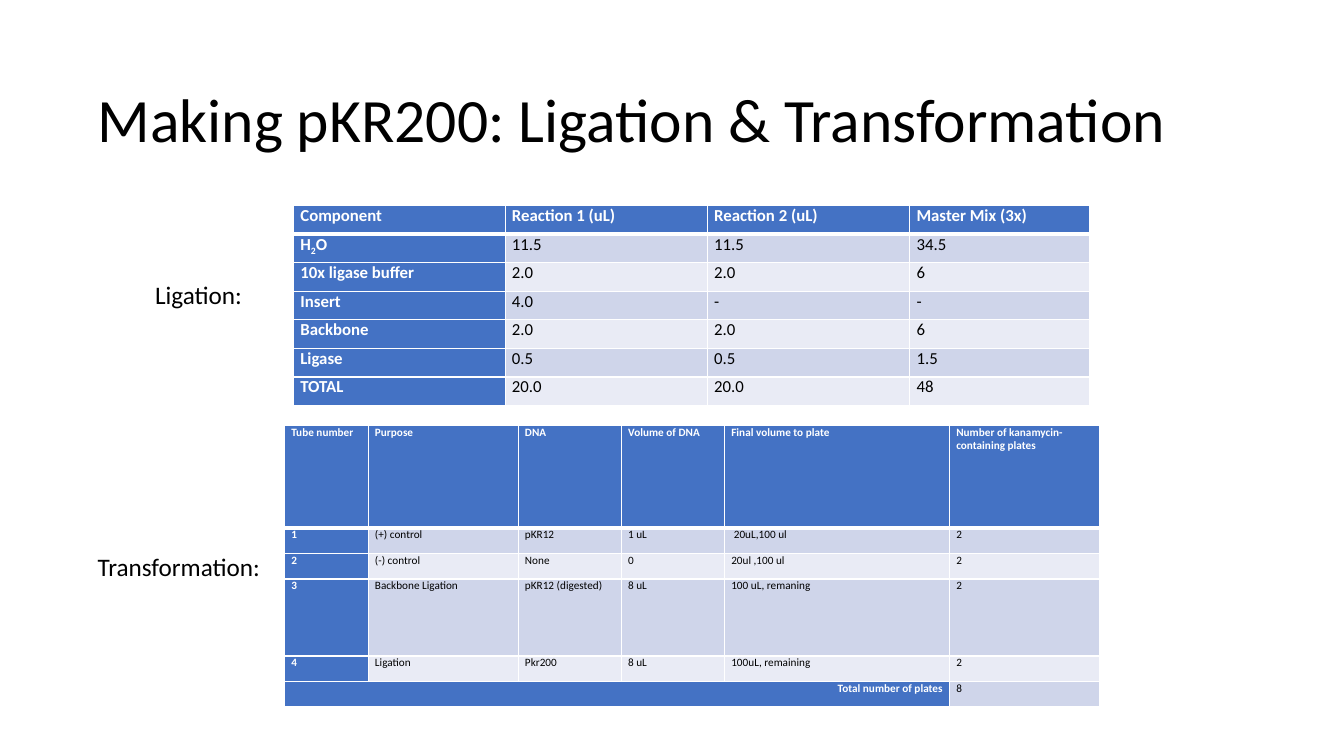
from lxml.etree import SubElement
from pptx import Presentation
from pptx.dml.color import RGBColor
from pptx.enum.text import MSO_ANCHOR as Anchor, PP_ALIGN as Align
from pptx.oxml.ns import qn
from pptx.util import Cm, Pt

BLACK = RGBColor(0x00, 0x00, 0x00)
WHITE = RGBColor(0xFF, 0xFF, 0xFF)
BLUE = RGBColor(0x44, 0x72, 0xC4)
BANDS = [RGBColor(0xE9, 0xEB, 0xF5), RGBColor(0xCF, 0xD5, 0xEA)]
FONT = "Calibri"

LIGATION_ROWS = [
    ["Component", "Reaction 1 (uL)", "Reaction 2 (uL)", "Master Mix (3x)"],
    [("H", "2", "O"), "11.5", "11.5", "34.5"],
    ["10x ligase buffer", "2.0", "2.0", "6"],
    ["Insert", "4.0", "-", "-"],
    ["Backbone", "2.0", "2.0", "6"],
    ["Ligase", "0.5", "0.5", "1.5"],
    ["TOTAL", "20.0", "20.0", "48"],
]
TUBE_ROWS = [
    ["Tube number", "Purpose", "DNA", "Volume of DNA", "Final volume to plate",
     "Number of kanamycin-containing plates"],
    ["1", "(+) control", "pKR12", "1 uL", " 20uL,100 ul", "2"],
    ["2", "(-) control", "None", "0", "20ul ,100 ul", "2"],
    ["3", "Backbone Ligation", "pKR12 (digested)", "8 uL", "100 uL, remaning", "2"],
    ["4", "Ligation", "Pkr200", "8 uL", "100uL, remaining", "2"],
    ["Total number of plates", None, None, None, None, "8"],
]


def add_span(para, text, size, color=BLACK, bold=False):
    span = para.add_run()
    span.text = text
    font = span.font
    font.name, font.size, font.bold = FONT, Pt(size), bold
    font.color.rgb = color
    return span


def add_text(page, text, left, top, width, height, size, wrap=False):
    box = page.shapes.add_textbox(Cm(left), Cm(top), Cm(width), Cm(height))
    box.text_frame.word_wrap = wrap
    para = box.text_frame.paragraphs[0]
    add_span(para, text, size)
    return box


def set_borders(cell, top, bottom):
    """White borders; top and bottom widths are in points."""
    properties = cell._tc.get_or_add_tcPr()
    for side, width in (("L", 1), ("R", 1), ("T", top), ("B", bottom)):
        line = SubElement(properties, qn(f"a:ln{side}"), w=str(Pt(width)))
        SubElement(SubElement(line, qn("a:solidFill")), qn("a:srgbClr"), val=str(WHITE))


def fill_cell(cell, content, size, row, is_heading):
    cell.margin_left = cell.margin_right = Cm(0.17)
    cell.margin_top = cell.margin_bottom = 0
    set_borders(cell, 3 if row == 1 else 1, 3 if row == 0 else 1)
    cell.fill.solid()
    cell.fill.fore_color.rgb = BLUE if is_heading else BANDS[row % 2]
    if content is None:
        return
    parts = content if isinstance(content, tuple) else (content,)
    para = cell.text_frame.paragraphs[0]
    for index, part in enumerate(parts):
        span = add_span(para, part, size, WHITE if is_heading else BLACK, is_heading)
        if index == 1:  # the middle part of a formula is a subscript
            span._r.get_or_add_rPr().set("baseline", "-25000")


def add_grid(page, rows, left, top, widths, heights, size):
    frame = page.shapes.add_table(len(rows), len(widths), Cm(left), Cm(top),
                                  Cm(sum(widths)), Cm(sum(heights)))
    table = frame.table
    table.first_col = True
    for column, width in zip(table.columns, widths):
        column.width = Cm(width)
    for table_row, height in zip(table.rows, heights):
        table_row.height = Cm(height)
    for r, contents in enumerate(rows):
        for c, content in enumerate(contents):
            fill_cell(table.cell(r, c), content, size, r, r == 0 or c == 0)
    return table


def main():
    deck = Presentation()
    deck.slide_width, deck.slide_height = Cm(33.87), Cm(19.05)
    page = deck.slides.add_slide(deck.slide_layouts[6])

    # Title
    title = add_text(page, "Making pKR200: Ligation & Transformation",
                     2.21, 1.22, 29.36, 3.73, 44, wrap=True)
    title.text_frame.vertical_anchor = Anchor.MIDDLE
    title.text_frame.paragraphs[0].line_spacing = 0.9

    # Ligation table
    add_grid(page, LIGATION_ROWS, 7.4, 5.18, [5.33, 5.1, 5.1, 4.53], [0.72] * 7, 12)

    # Transformation table, with a total row across the first five columns
    tubes = add_grid(page, TUBE_ROWS, 7.17, 10.72, [2.11, 3.78, 2.6, 2.6, 5.67, 3.78],
                     [2.59, 0.64, 0.64, 1.94, 0.64, 0.64], 8)
    total = tubes.cell(5, 0)
    total.merge(tubes.cell(5, 4))
    total.text_frame.paragraphs[0].alignment = Align.RIGHT

    # Table labels
    add_text(page, "Ligation:", 3.66, 6.91, 3.25, 1.02, 18)
    add_text(page, "Transformation:", 2.21, 13.77, 5.51, 1.02, 18)

    deck.save("out.pptx")


if __name__ == "__main__":
    main()
